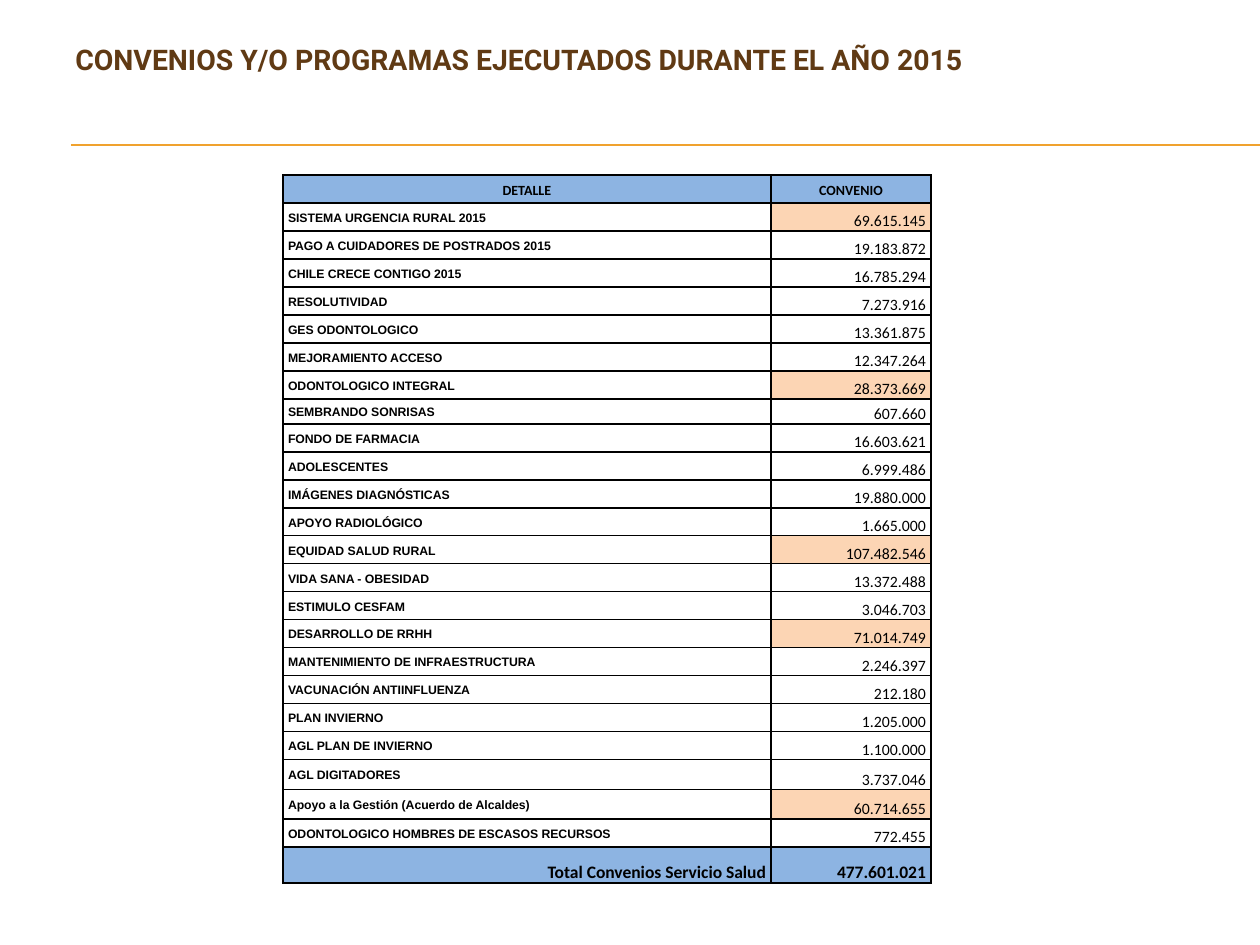
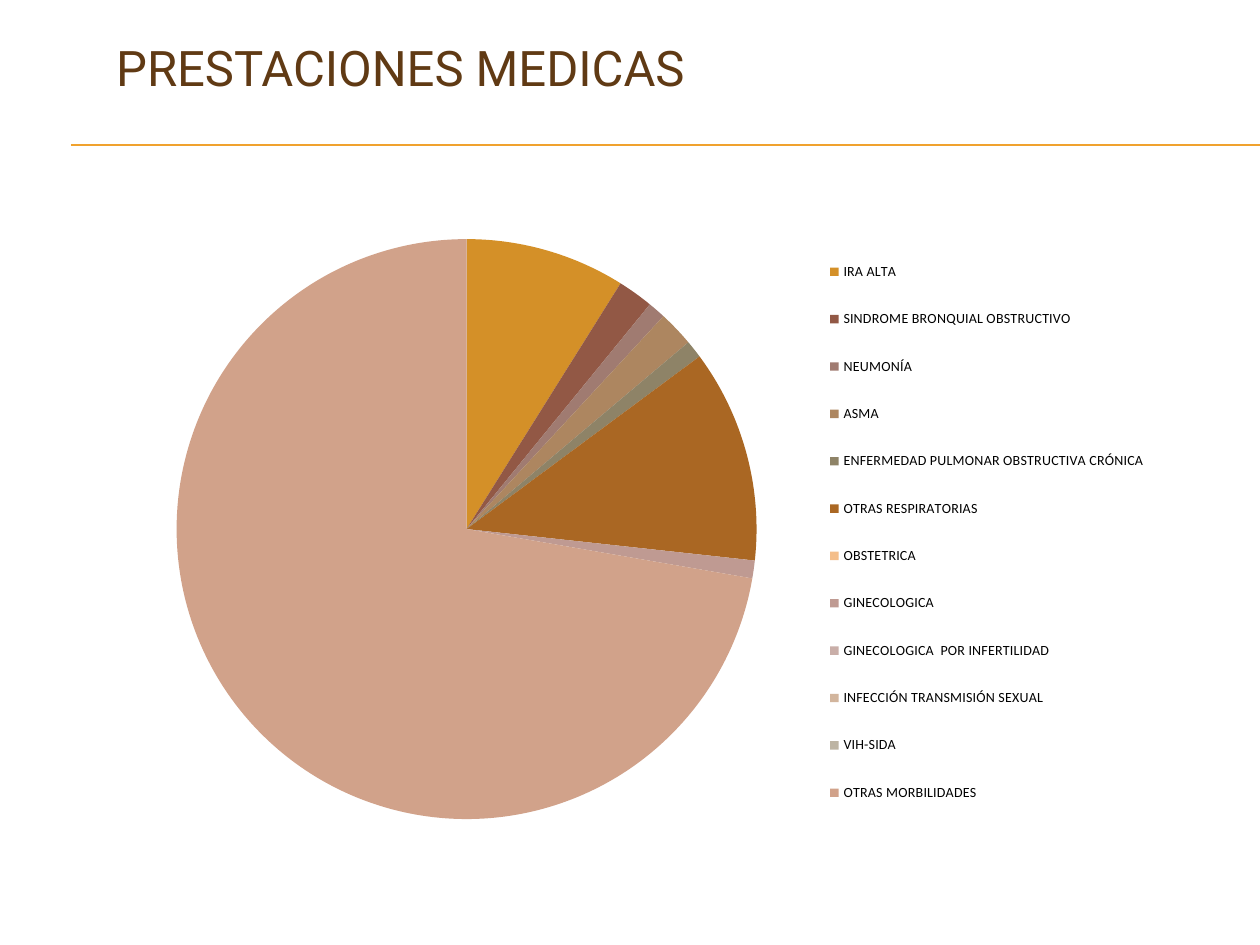
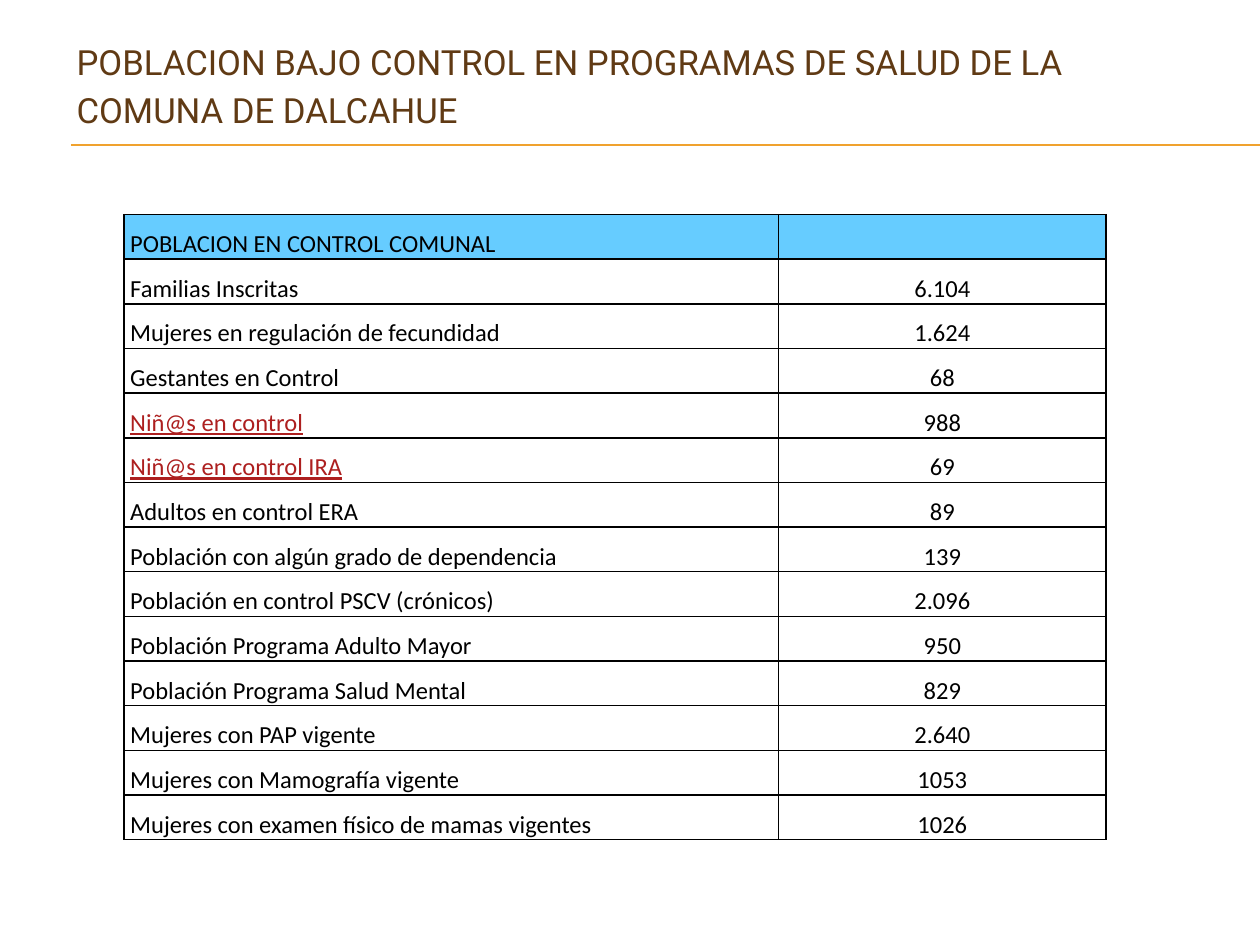
"""Builds three slides on health agreements, medical services and population under control."""
from lxml.etree import SubElement
from pptx import Presentation
from pptx.chart.data import CategoryChartData
from pptx.dml.color import RGBColor
from pptx.enum.chart import XL_CHART_TYPE, XL_LEGEND_POSITION
from pptx.enum.shapes import MSO_CONNECTOR
from pptx.enum.text import MSO_ANCHOR, PP_ALIGN
from pptx.oxml import parse_xml
from pptx.oxml.ns import nsdecls, qn
from pptx.util import Pt

BLACK, WHITE = "000000", "FFFFFF"
TITLE_BROWN, RULE_GOLD, LINK_RED = "603A14", "F0A22E", "AD1F1F"
HEADER_BLUE, HIGHLIGHT_PEACH, HEADER_SKY = "8DB4E2", "FCD5B4", "66CCFF"
LEFT, CENTER, RIGHT = PP_ALIGN.LEFT, PP_ALIGN.CENTER, PP_ALIGN.RIGHT
MIDDLE, BOTTOM = MSO_ANCHOR.MIDDLE, MSO_ANCHOR.BOTTOM

rgb = RGBColor.from_string


def style_cell(cell, text, fill, align, anchor, inset, font, size, bold=False, color=BLACK):
    properties = cell._tc.get_or_add_tcPr()
    for edge in ("lnL", "lnR", "lnT", "lnB"):
        properties.append(parse_xml(
            f'<a:{edge} {nsdecls("a")} w="12700"><a:solidFill><a:srgbClr val="{BLACK}"/>'
            f'</a:solidFill></a:{edge}>'))
    cell.fill.solid()
    cell.fill.fore_color.rgb = rgb(fill)
    cell.margin_left = cell.margin_right = Pt(inset)
    cell.margin_top = cell.margin_bottom = 0
    cell.vertical_anchor = anchor
    cell.text_frame.text = text
    paragraph = cell.text_frame.paragraphs[0]
    paragraph.alignment = align
    paragraph.line_spacing = 1.15
    for run in paragraph.runs:
        run.font.name, run.font.size, run.font.bold = font, Pt(size), bold
        run.font.color.rgb = rgb(color)
        run.font.underline = color == LINK_RED


def add_grid(slide, left, top, widths, heights):
    table = slide.shapes.add_table(
        len(heights), len(widths), Pt(left), Pt(top), Pt(sum(widths)), Pt(sum(heights))).table
    for column, width in zip(table.columns, widths):
        column.width = Pt(width)
    for row, height in zip(table.rows, heights):
        row.height = Pt(height)
    return table


prs = Presentation()
prs.slide_width, prs.slide_height = Pt(720), Pt(540)

titles = [
    ("CONVENIOS Y/O PROGRAMAS EJECUTADOS DURANTE EL AÑO 2015", 36, 20.5, 44, 16.2, True, 1),
    ("PRESTACIONES MEDICAS", 59.3, 17.6, 57, 28, False, 1),
    ("POBLACION BAJO CONTROL EN PROGRAMAS DE SALUD DE LA\vCOMUNA DE DALCAHUE",
     36.7, 16.4, 61, 19.8, False, 1.15),
]
for title, left, top, height, size, bold, spacing in titles:
    slide = prs.slides.add_slide(prs.slide_layouts[6])
    for rule_y in (82.8, 83.1):
        rule = slide.shapes.add_connector(
            MSO_CONNECTOR.STRAIGHT, Pt(40.5), Pt(rule_y), Pt(720), Pt(rule_y))
        rule.line.color.rgb = rgb(RULE_GOLD)
        rule.line.width = Pt(0.75)
        SubElement(rule._element.spPr, qn("a:effectLst"))
    heading = slide.shapes.add_textbox(Pt(left), Pt(top), Pt(648), Pt(height)).text_frame
    heading.word_wrap = True
    heading.text = title
    heading.paragraphs[0].line_spacing = spacing
    for run in heading.paragraphs[0].runs:
        run.font.name, run.font.size, run.font.bold = "Roboto", Pt(size), bold
        run.font.color.rgb = rgb(TITLE_BROWN)

agreements_slide, services_slide, population_slide = prs.slides

agreements = [
    ("SISTEMA URGENCIA RURAL 2015", "69.615.145"),
    ("PAGO A CUIDADORES DE POSTRADOS 2015", "19.183.872"),
    ("CHILE CRECE CONTIGO 2015", "16.785.294"),
    ("RESOLUTIVIDAD", "7.273.916"),
    ("GES ODONTOLOGICO", "13.361.875"),
    ("MEJORAMIENTO ACCESO", "12.347.264"),
    ("ODONTOLOGICO INTEGRAL", "28.373.669"),
    ("SEMBRANDO SONRISAS", "607.660"),
    ("FONDO DE FARMACIA", "16.603.621"),
    ("ADOLESCENTES", "6.999.486"),
    ("IMÁGENES DIAGNÓSTICAS", "19.880.000"),
    ("APOYO RADIOLÓGICO", "1.665.000"),
    ("EQUIDAD SALUD RURAL", "107.482.546"),
    ("VIDA SANA - OBESIDAD", "13.372.488"),
    ("ESTIMULO CESFAM", "3.046.703"),
    ("DESARROLLO DE RRHH", "71.014.749"),
    ("MANTENIMIENTO DE INFRAESTRUCTURA", "2.246.397"),
    ("VACUNACIÓN ANTIINFLUENZA", "212.180"),
    ("PLAN INVIERNO", "1.205.000"),
    ("AGL PLAN DE INVIERNO", "1.100.000"),
    ("AGL DIGITADORES", "3.737.046"),
    ("Apoyo a la Gestión (Acuerdo de Alcaldes)", "60.714.655"),
    ("ODONTOLOGICO HOMBRES DE ESCASOS RECURSOS", "772.455"),
]
heights = [16] * 8 + [14.3] + [16] * 12 + [17] * 2 + [16, 20.7]
agreements_table = add_grid(agreements_slide, 161.6, 100, (279, 91.4), heights)
for column, text in enumerate(("DETALLE", "CONVENIO")):
    style_cell(agreements_table.cell(0, column), text, HEADER_BLUE, CENTER, MIDDLE, 3,
               "Calibri", 8, True)
for row, (detail, amount) in enumerate(agreements, 1):
    large = int(amount.replace(".", "")) > 25_000_000
    style_cell(agreements_table.cell(row, 0), detail, WHITE, LEFT, MIDDLE, 3, "Arial", 7, True)
    style_cell(agreements_table.cell(row, 1), amount, HIGHLIGHT_PEACH if large else WHITE,
               RIGHT, BOTTOM, 3, "Calibri", 9)
for column, text in enumerate(("Total Convenios Servicio Salud", "477.601.021")):
    style_cell(agreements_table.cell(len(agreements) + 1, column), text, HEADER_BLUE,
               RIGHT, BOTTOM, 3, "Calibri", 10, True)

services = [
    ("IRA ALTA", 9, "D49028"),
    ("SINDROME BRONQUIAL OBSTRUCTIVO", 2, "925845"),
    ("NEUMONÍA", 1, "A07B71"),
    ("ASMA", 2, "AD8660"),
    ("ENFERMEDAD PULMONAR OBSTRUCTIVA CRÓNICA", 1, "8E8367"),
    ("OTRAS RESPIRATORIAS", 12, "AA6723"),
    ("OBSTETRICA", 0, "F4BE8A"),
    ("GINECOLOGICA", 1, "BF9A92"),
    ("GINECOLOGICA  POR INFERTILIDAD", 0, "C9AEA8"),
    ("INFECCIÓN TRANSMISIÓN SEXUAL", 0, "D2B59D"),
    ("VIH-SIDA", 0, "BDB4A3"),
    ("OTRAS MORBILIDADES", 73, "D1A28A"),
]
names, shares, colors = zip(*services)
services_data = CategoryChartData()
services_data.categories = names
services_data.add_series("Series 1", shares)
pie = services_slide.shapes.add_chart(
    XL_CHART_TYPE.PIE, Pt(23.8), Pt(122.4), Pt(684), Pt(356.4), services_data).chart
pie.has_title = False
pie.font.name, pie.font.size = "Roboto", Pt(10)
pie.font.color.rgb = rgb(BLACK)
pie.plots[0].vary_by_categories = True
for index, color in enumerate(colors):
    slice_fill = pie.plots[0].series[0].points[index].format.fill
    slice_fill.solid()
    slice_fill.fore_color.rgb = rgb(color)
pie.has_legend = True
pie.legend.position = XL_LEGEND_POSITION.RIGHT
pie.legend.include_in_layout = False
pie.legend.font.name, pie.legend.font.size = "Calibri", Pt(8)
pie.legend.font.color.rgb = rgb(BLACK)

plot_area = pie._chartSpace.chart.plotArea
legend = pie.legend._element
for layout in plot_area.findall(qn("c:layout")) + legend.findall(qn("c:layout")):
    layout.getparent().remove(layout)
for part, place, target, bounds in (
        (plot_area, 0, '<c:layoutTarget val="inner"/>', (0.1, 0.04, 0.51, 0.93)),
        (legend, 1, "", (0.63, 0.03, 0.32, 0.96))):
    modes = '<c:xMode val="edge"/><c:yMode val="edge"/>'
    sizes = "".join(f'<c:{side} val="{value}"/>' for side, value in zip("xywh", bounds))
    part.insert(place, parse_xml(
        f'<c:layout {nsdecls("c")}><c:manualLayout>{target}{modes}{sizes}'
        '</c:manualLayout></c:layout>'))

population = [
    ("POBLACION EN CONTROL COMUNAL", ""),
    ("Familias Inscritas", "6.104"),
    ("Mujeres en regulación de fecundidad", "1.624"),
    ("Gestantes en Control", "68"),
    ("Niñ@s en control", "988"),
    ("Niñ@s en control IRA", "69"),
    ("Adultos en control ERA", "89"),
    ("Población con algún grado de dependencia", "139"),
    ("Población en control PSCV (crónicos)", "2.096"),
    ("Población Programa Adulto Mayor", "950"),
    ("Población Programa Salud Mental", "829"),
    ("Mujeres con PAP vigente", "2.640"),
    ("Mujeres con Mamografía vigente", "1053"),
    ("Mujeres con examen físico de mamas vigentes", "1026"),
]
population_table = add_grid(
    population_slide, 70.8, 122.6, (374.1, 187.2), [25.53] * len(population))
for row, (group, count) in enumerate(population):
    fill = WHITE if row else HEADER_SKY
    group_color = LINK_RED if "@" in group else BLACK
    style_cell(population_table.cell(row, 0), group, fill, LEFT, BOTTOM, 3.6,
               "Calibri", 14, color=group_color)
    style_cell(population_table.cell(row, 1), count, fill, CENTER, BOTTOM, 3.6, "Calibri", 14)

prs.save("out.pptx")
